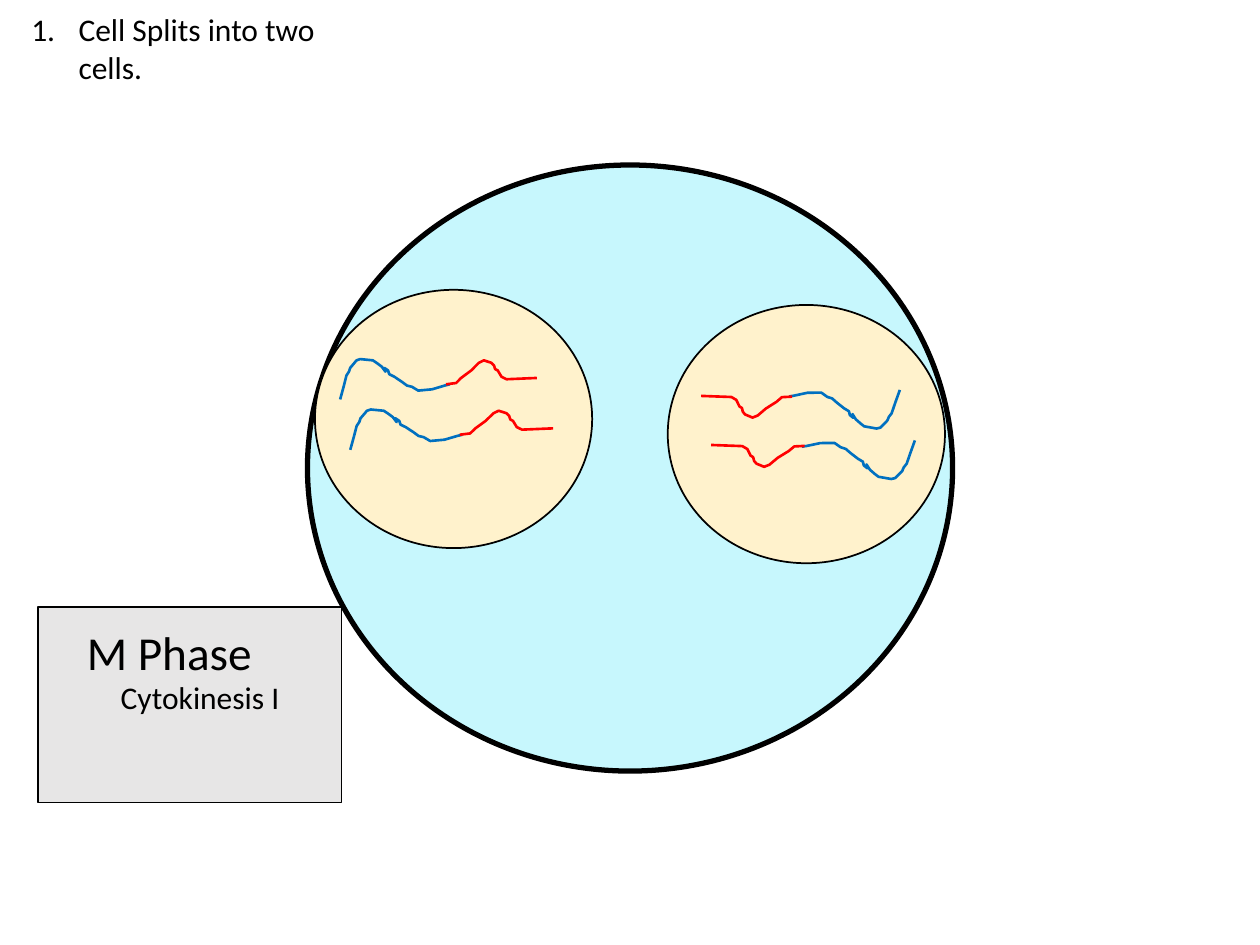
import pptx
import pptx.util
import pptx.dml.color
import pptx.enum.shapes
import pptx.enum.text
import pptx.oxml

RGBColor = pptx.dml.color.RGBColor
BLACK = RGBColor(0x00, 0x00, 0x00)
CYTOPLASM = RGBColor(0xC7, 0xF7, 0xFD)
NUCLEUS = RGBColor(0xFF, 0xF2, 0xCC)
LABEL_GRAY = RGBColor(0xE7, 0xE6, 0xE6)
BLUE = RGBColor(0x00, 0x70, 0xC0)
RED = RGBColor(0xFF, 0x00, 0x00)

FONT = "Calibri"
OVAL = pptx.enum.shapes.MSO_SHAPE.OVAL
RECTANGLE = pptx.enum.shapes.MSO_SHAPE.RECTANGLE

# The slide is a grid of 100 columns by 75 rows of square cells
COLUMNS, ROWS = 100, 75
CELL = pptx.util.Inches(0.1)

# Chromosome outlines, in tenths of a cell from the top left
BLUE_ARM = [(0, 32), (3, 21), (5, 13), (7, 10), (8, 7), (13, 1), (16, 0),
            (26, 1), (29, 3), (33, 6), (36, 10), (35, 7), (38, 9), (39, 12),
            (43, 14), (49, 18), (53, 21), (57, 22), (62, 25), (73, 24),
            (83, 21), (87, 20)]
RED_ARM = [(0, 19), (8, 18), (12, 14), (16, 11), (20, 8), (24, 4), (26, 2),
           (30, 0), (36, 2), (38, 4), (39, 7), (41, 8), (44, 13), (48, 15),
           (72, 14)]


def cells(count):
    return pptx.util.Emu(round(count * CELL))


def add_outlined(shapes, kind, left, top, width, height, fill, weight):
    shape = shapes.add_shape(kind, cells(left), cells(top),
                             cells(width), cells(height))
    shape.shadow.inherit = False
    shape.fill.solid()
    shape.fill.fore_color.rgb = fill
    shape.line.color.rgb = BLACK
    shape.line.width = pptx.util.Pt(weight)


def add_arm(shapes, points, left, top, width, color, rotation):
    """Draw one open chromosome arm, stretched to the given width."""
    scale = (cells(width) / points[-1][0], CELL / 10)
    builder = shapes.build_freeform(*points[0], scale=scale)
    builder.add_line_segments(points[1:], close=False)
    arm = builder.convert_to_shape(cells(left), cells(top))
    arm.shadow.inherit = False
    arm.fill.background()
    arm.line.color.rgb = color
    arm.line.width = pptx.util.Pt(1.5)
    arm.rotation = rotation


def add_nucleus(page, left, top, blue_places, red_places, rotation=0):
    """Group a nucleus with its two chromosomes."""
    shapes = page.shapes.add_group_shape().shapes
    add_outlined(shapes, OVAL, left, top, 22, 20.5, NUCLEUS, 1)
    for blue, red in zip(blue_places, red_places):
        add_arm(shapes, BLUE_ARM, *blue, BLUE, rotation)
        add_arm(shapes, RED_ARM, *red, RED, rotation)


def add_text(page, text, left, top, width, height, size=18, numbered=False):
    box = page.shapes.add_textbox(cells(left), cells(top),
                                  cells(width), cells(height))
    frame = box.text_frame
    frame.word_wrap = True
    frame.auto_size = pptx.enum.text.MSO_AUTO_SIZE.SHAPE_TO_FIT_TEXT
    para = frame.paragraphs[0]
    span = para.add_run()
    span.text = text
    span.font.name = FONT
    span.font.size = pptx.util.Pt(size)
    span.font.color.rgb = BLACK
    if numbered:
        indent = cells(3.75)
        properties = para._p.get_or_add_pPr()
        properties.set("marL", str(indent))
        properties.set("indent", str(-indent))
        properties.append(pptx.oxml.parse_xml(
            '<a:buAutoNum xmlns:a="http://schemas.openxmlformats.org/'
            'drawingml/2006/main" type="arabicPeriod"/>'))


def main():
    deck = pptx.Presentation()
    deck.slide_width = cells(COLUMNS)
    deck.slide_height = cells(ROWS)
    page = deck.slides.add_slide(deck.slide_layouts[6])

    # Cell and phase panel
    add_outlined(page.shapes, OVAL, 24.4, 13.1, 51.2, 48.1, CYTOPLASM, 3)
    add_outlined(page.shapes, RECTANGLE, 3, 48.2, 24.1, 15.5, LABEL_GRAY, 1)

    # Step and phase names
    add_text(page, "Cell Splits into two cells.", 1.5, 0.3, 25.7, 11.6,
             numbered=True)
    add_text(page, "M Phase", 5.9, 49, 21.2, 5.6, size=27)
    add_text(page, "Cytokinesis I", 8.6, 53.3, 21.2, 4)

    # Two nuclei; each arm is placed by left, top and width
    add_nucleus(page, 25, 23,
                blue_places=[(27, 28.5, 8.7), (27.8, 32.5, 8.9)],
                red_places=[(35.4, 28.6, 7.2), (36.5, 32.6, 7.4)])
    add_nucleus(page, 53, 24.2,
                blue_places=[(62.6, 30.6, 8.7), (63.6, 34.6, 8.9)],
                red_places=[(55.6, 31.2, 7.2), (56.4, 35.1, 7.4)],
                rotation=184.5)

    deck.save("out.pptx")


if __name__ == "__main__":
    main()
